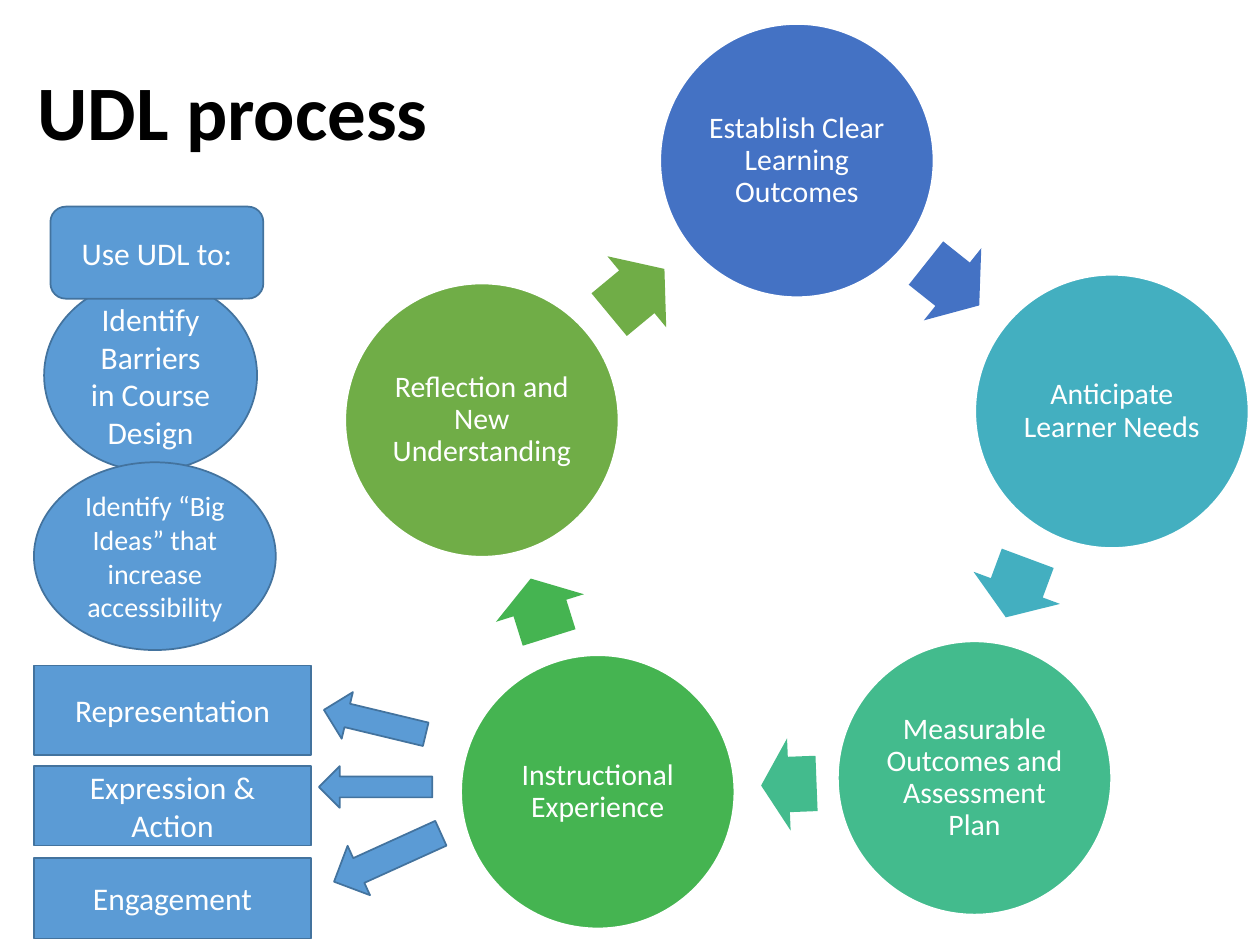
import pptx
import pptx.dml.color
import pptx.enum.shapes
import pptx.enum.text
import pptx.util

Pt = pptx.util.Pt
MSO = pptx.enum.shapes.MSO_SHAPE
ALIGN = pptx.enum.text.PP_ALIGN
MIDDLE = pptx.enum.text.MSO_ANCHOR.MIDDLE

COLORS = {
    "black": "000000",
    "white": "FFFFFF",
    "panel": "5B9BD5",
    "edge": "43739E",
    "outcomes": "4472C4",
    "needs": "43AFC0",
    "assessment": "43BB8D",
    "experience": "45B451",
    "reflection": "70AD47",
}
FONT = "Calibri"
CIRCLE = 156.2
ARROW_HEIGHT = 52.7

STEPS = [
    ("Establish Clear Learning Outcomes", "outcomes", (377.3, 13.7), (524.9, 136.1, 38.9), 38.5),
    ("Anticipate Learner Needs", "needs", (557.3, 157), (563, 309.6, 36), 110.4),
    ("Measurable Outcomes and Assessment Plan", "assessment", (478.8, 366.5), (434.9, 421.9, 31.7), 177.8),
    ("Instructional Experience", "experience", (263.5, 374.4), (290.9, 321.1, 35.3), 252.6),
    ("Reflection and New Understanding", "reflection", (197.3, 162), (343.4, 140.4, 41), 320.4),
]
PRINCIPLES = [
    ("Representation", 380.2, 51.1),
    ("Expression & Action", 437.8, 45.4),
    ("Engagement", 490.3, 46.1),
]
POINTERS = [
    (MSO.RIGHT_ARROW, (182.2, 437.8, 64.8, 23.8), 180),
    (MSO.RIGHT_ARROW, (184.3, 398.9, 59.8, 27.4), 193.5),
    (MSO.DOWN_ARROW, (205.9, 456.5, 31, 67), 65.6),
]
USES = [
    (MSO.OVAL, (25.2, 159.8, 121.7, 109.4), "Identify Barriers in Course Design", 18),
    (MSO.OVAL, (19.4, 264.2, 138.2, 107.3), "Identify “Big Ideas” that increase accessibility", 16),
    (MSO.ROUNDED_RECTANGLE, (28.8, 118.1, 121.7, 52.6), "Use UDL to:", 18),
]


def rgb(name):
    return pptx.dml.color.RGBColor.from_string(COLORS[name])


def add_text(sp, text, size, color="white", bold=False, align=ALIGN.CENTER, spacing=None):
    tf = sp.text_frame
    tf.word_wrap = True
    tf.vertical_anchor = MIDDLE
    p = tf.paragraphs[0]
    p.alignment = align
    if spacing:
        p.line_spacing = spacing
    r = p.add_run()
    r.text = text
    r.font.name = FONT
    r.font.size = Pt(size)
    r.font.bold = bold
    r.font.color.rgb = rgb(color)


def add_shape(s, kind, box, fill="panel", line="edge", rotation=0):
    sp = s.shapes.add_shape(kind, *map(Pt, box))
    sp.shadow.inherit = False
    sp.rotation = rotation
    sp.fill.solid()
    sp.fill.fore_color.rgb = rgb(fill)
    if line:
        sp.line.color.rgb = rgb(line)
        sp.line.width = Pt(1)
    else:
        sp.line.fill.background()
    return sp


def add_title(s, text):
    sp = s.shapes.add_textbox(Pt(14.4), Pt(13.7), Pt(620.6), Pt(104.4))
    add_text(sp, text, 44, "black", True, ALIGN.LEFT, 0.9)


def add_step(s, text, color, corner, arrow, rotation):
    sp = add_shape(s, MSO.OVAL, (*corner, CIRCLE, CIRCLE), color, "white")
    tf = sp.text_frame
    tf.margin_left = tf.margin_right = tf.margin_top = tf.margin_bottom = Pt(1.5)
    add_text(sp, text, 17, spacing=0.9)
    sp = add_shape(s, MSO.RIGHT_ARROW, (*arrow, ARROW_HEIGHT), color, None, rotation)
    sp.adjustments[0] = 0.6
    sp.adjustments[1] = 0.5


def main():
    prs = pptx.Presentation()
    prs.slide_width, prs.slide_height = Pt(720), Pt(540)
    s = prs.slides.add_slide(prs.slide_layouts[6])
    add_title(s, "UDL process")
    for step in STEPS:
        add_step(s, *step)
    for text, top, height in PRINCIPLES:
        add_text(add_shape(s, MSO.RECTANGLE, (19.4, top, 158.4, height)), text, 18)
    for kind, box, rotation in POINTERS:
        add_shape(s, kind, box, rotation=rotation)
    for kind, box, text, size in USES:
        add_text(add_shape(s, kind, box), text, size)
    prs.save("out.pptx")


if __name__ == "__main__":
    main()
